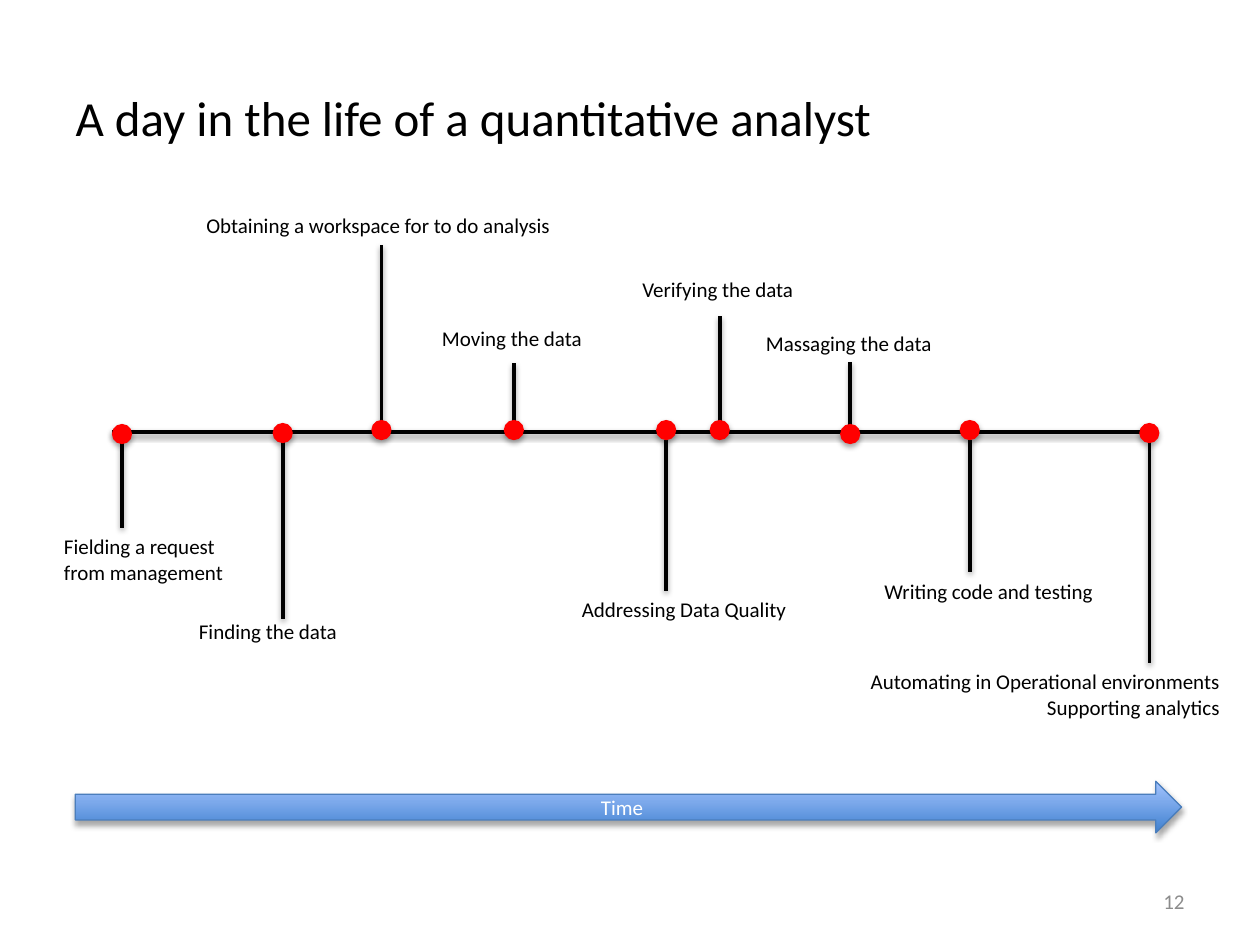
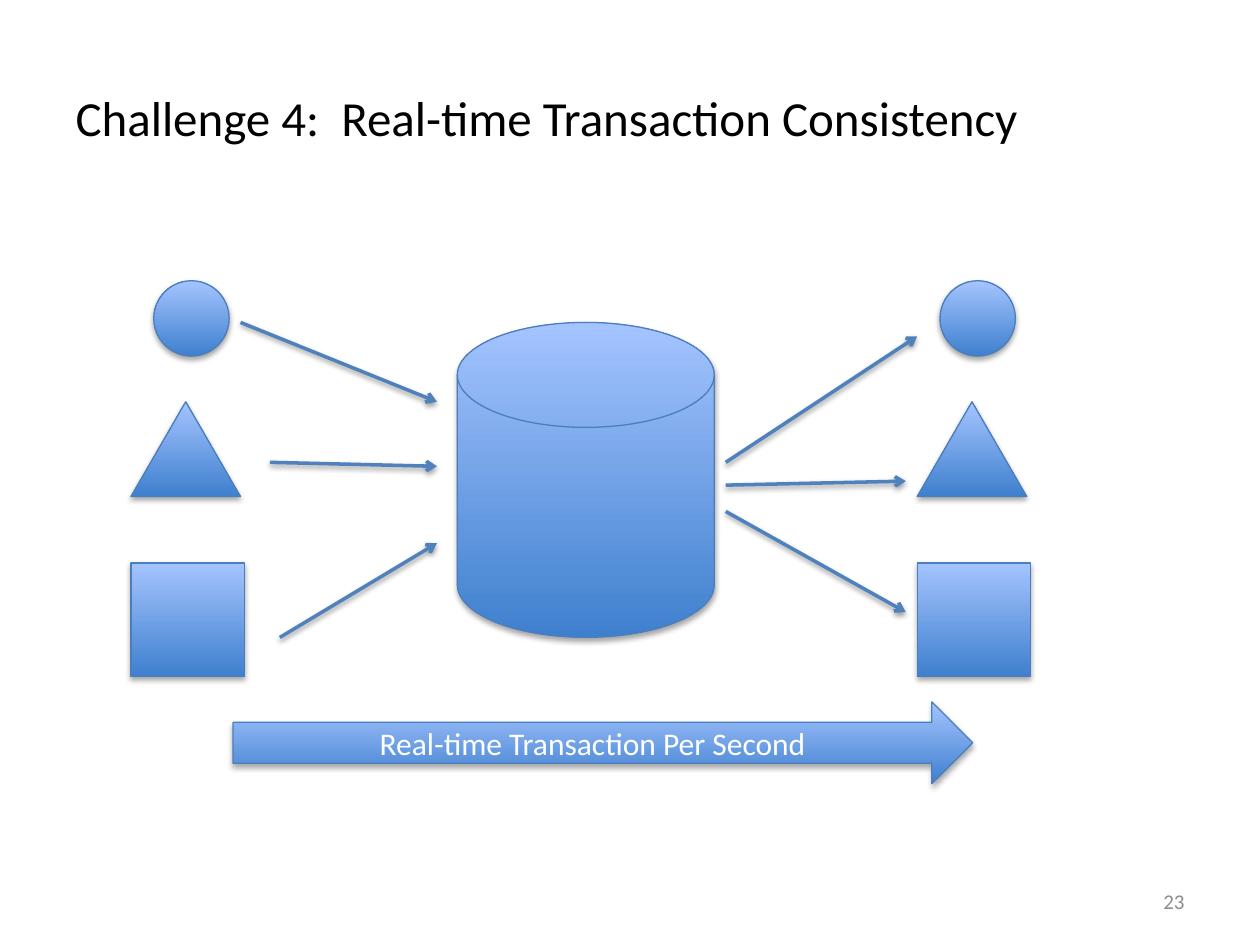
from lxml.etree import SubElement
from pptx import Presentation
from pptx.dml.color import RGBColor
from pptx.enum.shapes import MSO_CONNECTOR, MSO_SHAPE as Shape
from pptx.enum.text import MSO_ANCHOR as Anchor, MSO_AUTO_SIZE as AutoSize, PP_ALIGN as Align
from pptx.oxml.ns import qn
from pptx.util import Cm, Pt

FONT = "Calibri"
BLACK, WHITE, GREY, RED = "000000", "FFFFFF", "8C8C8C", "FF0000"
OUTLINE, ARROW = "4B7EBC", "4F81BD"
GRADIENT = ("3F80CE", "A4C4FF")
DOT_RADIUS = 0.19


def color(value):
    return RGBColor.from_string(value)


class Painter:
    def __init__(self, deck):
        self.deck = deck
        self.slide = None

    def start_slide(self, title, number):
        self.slide = self.deck.slides.add_slide(self.deck.slide_layouts[5])
        holder = self.slide.shapes.title
        holder.left, holder.top, holder.width, holder.height = map(Cm, (1.27, 0.76, 22.86, 3.18))
        self.fill_text(holder.text_frame, title, 28, BLACK, Align.LEFT, Anchor.MIDDLE)
        self.text(number, (18.21, 17.65, 5.92, 1.02), 12, GREY, Align.RIGHT, Anchor.MIDDLE)

    def fill_text(self, frame, content, size, ink, align, anchor):
        frame.text = content
        frame.vertical_anchor = anchor
        for para in frame.paragraphs:
            para.alignment = align
            for span in para.runs:
                span.font.name = FONT
                span.font.size = Pt(size)
                span.font.color.rgb = color(ink)

    def text(self, content, place, size=12, ink=BLACK, align=Align.LEFT, anchor=Anchor.TOP):
        box = self.slide.shapes.add_textbox(*map(Cm, place))
        self.fill_text(box.text_frame, content, size, ink, align, anchor)
        box.text_frame.word_wrap = True
        return box

    def label(self, content, place, align):
        box = self.text(content, place, align=align)
        box.text_frame.word_wrap = align == Align.RIGHT
        box.text_frame.auto_size = AutoSize.SHAPE_TO_FIT_TEXT

    def shadow(self, properties, distance, opacity):
        effects = SubElement(properties, qn("a:effectLst"))
        outer = SubElement(effects, qn("a:outerShdw"), blurRad="40000", dist=str(distance),
                           dir="5400000", rotWithShape="0")
        tint = SubElement(outer, qn("a:srgbClr"), val=BLACK)
        SubElement(tint, qn("a:alpha"), val=str(opacity * 1000))

    def shape(self, kind, place, fill=None, outline=OUTLINE):
        shape = self.slide.shapes.add_shape(kind, *map(Cm, place))
        if fill:
            shape.fill.solid()
            shape.fill.fore_color.rgb = color(fill)
        else:
            shape.fill.gradient()
            shape.fill.gradient_angle = 90
            for stop, shade in zip(shape.fill.gradient_stops, GRADIENT):
                stop.color.rgb = color(shade)
        shape.line.color.rgb = color(outline)
        shape.line.width = Pt(0.75)
        self.shadow(shape.element.spPr, 23000, 35)
        return shape

    def block_arrow(self, content, place, size):
        arrow = self.shape(Shape.RIGHT_ARROW, place)
        self.fill_text(arrow.text_frame, content, size, WHITE, Align.CENTER, Anchor.MIDDLE)

    def line(self, start, end, ink=BLACK, arrowhead=False):
        line = self.slide.shapes.add_connector(MSO_CONNECTOR.STRAIGHT, *map(Cm, start + end))
        line.line.color.rgb = color(ink)
        line.line.width = Pt(2)
        properties = line.element.spPr
        if arrowhead:
            SubElement(properties.find(qn("a:ln")), qn("a:tailEnd"), type="arrow")
        self.shadow(properties, 20000, 38)

    def event(self, content, x, y, stem_end, label_place, align=Align.LEFT):
        edge = y + DOT_RADIUS if stem_end > y else y - DOT_RADIUS
        self.line((x, edge), (x, stem_end))
        dot_place = (x - DOT_RADIUS, y - DOT_RADIUS, 2 * DOT_RADIUS, 2 * DOT_RADIUS)
        self.shape(Shape.OVAL, dot_place, RED, RED)
        height = 1.27 if "\n" in content else 0.76
        self.label(content, label_place + (height,), align)


def draw_timeline(painter):
    painter.start_slide("A day in the life of a quantitative analyst", "12")
    painter.line((2.26, 8.71), (23.16, 8.71))
    events = [
        ("Fielding a request\nfrom management", 2.46, 8.75, 10.64, (1.04, 10.64, 3.76)),
        ("Finding the data", 5.7, 8.73, 12.47, (3.76, 12.34, 3.33)),
        ("Obtaining a workspace for to do analysis", 7.69, 8.67, 4.93, (3.91, 4.17, 7.57)),
        ("Moving the data", 10.36, 8.67, 7.32, (8.66, 6.43, 3.4)),
        ("Addressing Data Quality", 13.43, 8.67, 11.91, (11.48, 11.91, 4.72)),
        ("Verifying the data", 14.51, 8.67, 6.38, (12.7, 5.46, 3.61)),
        ("Massaging the data", 17.14, 8.75, 7.29, (15.19, 6.53, 3.89)),
        ("Writing code and testing", 19.55, 8.67, 11.53, (17.58, 11.53, 4.78)),
        ("Automating in Operational environments\nSupporting analytics",
         23.17, 8.73, 13.36, (15.82, 13.36, 9.02), Align.RIGHT),
    ]
    for event in events:
        painter.event(*event)
    painter.block_arrow("Time", (1.52, 15.75, 22.3, 1.04), 12)


def draw_transactions(painter):
    painter.start_slide("Challenge 4:  Real-time Transaction Consistency", "23")
    for shift in (0, 15.85):
        painter.shape(Shape.OVAL, (3.1 + shift, 5.66, 1.52, 1.52))
        painter.shape(Shape.ISOSCELES_TRIANGLE, (2.64 + shift, 8.1, 2.21, 1.91))
        painter.shape(Shape.RECTANGLE, (2.64 + shift, 11.35, 2.29, 2.29))
    painter.shape(Shape.FLOWCHART_MAGNETIC_DISK, (9.22, 6.5, 5.18, 6.35))
    flows = [
        ((4.85, 6.5), (8.81, 8.1)),
        ((5.44, 9.32), (8.81, 9.4)),
        ((5.64, 12.85), (8.81, 10.95)),
        ((14.63, 9.32), (18.49, 6.78)),
        ((14.63, 9.78), (18.26, 9.7)),
        ((14.63, 10.31), (18.26, 12.34)),
    ]
    for start, end in flows:
        painter.line(start, end, ARROW, arrowhead=True)
    painter.block_arrow("Real-time Transaction Per Second", (4.7, 14.15, 14.91, 1.65), 18)


def main():
    deck = Presentation()
    deck.slide_width, deck.slide_height = Cm(25.4), Cm(19.05)
    painter = Painter(deck)
    draw_timeline(painter)
    draw_transactions(painter)
    deck.save("out.pptx")


if __name__ == "__main__":
    main()
